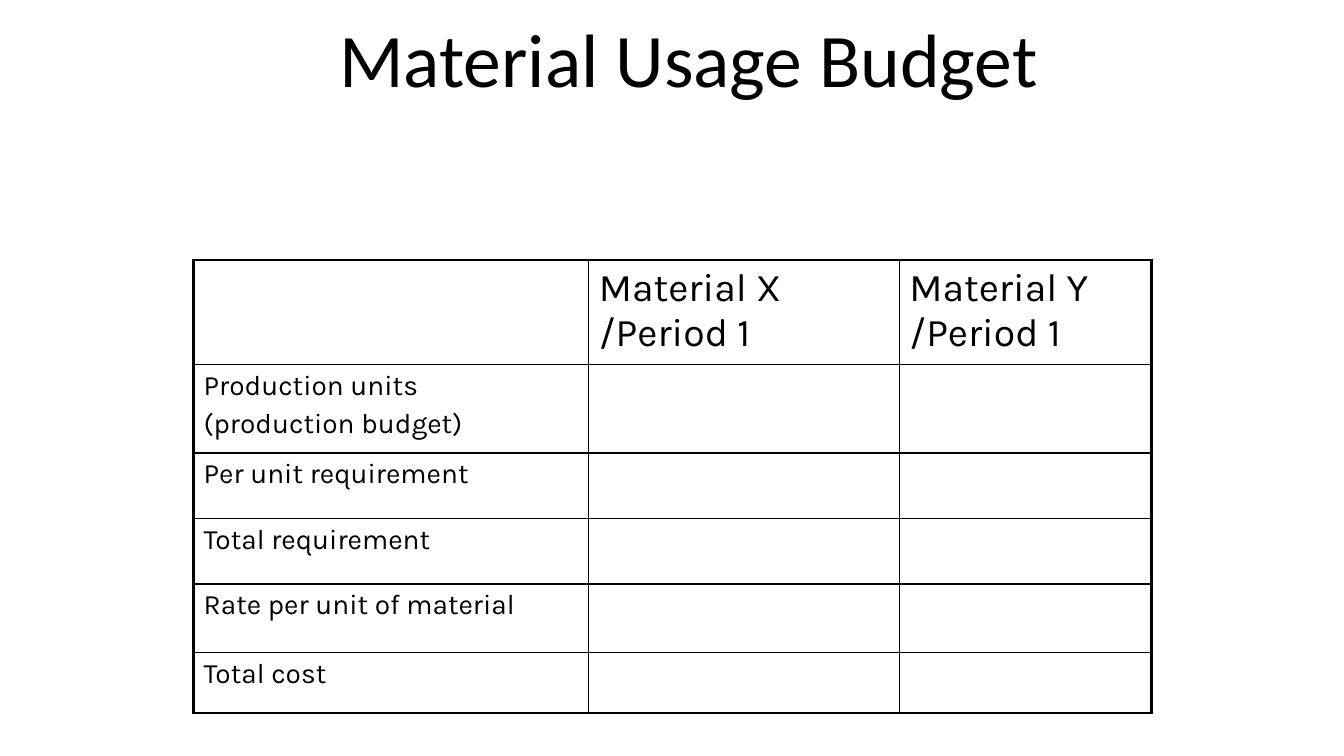
import dataclasses

import pptx
import pptx.dml.color
import pptx.enum.text
import pptx.oxml
import pptx.oxml.ns
import pptx.util

Inches = pptx.util.Inches
Pt = pptx.util.Pt
BLACK = "000000"
WIDTHS = [3.92, 3.08, 2.5]
THIN = 1
THICK = 2.25


@dataclasses.dataclass
class Row:
    height: float
    size: int
    texts: list[str]


ROWS = [
    Row(0.97, 28, ["", "Material X /Period 1", "Material Y /Period 1"]),
    Row(0.88, 20, ["Production units\n(production budget)", "", ""]),
    Row(0.65, 20, ["Per unit requirement", "", ""]),
    Row(0.65, 20, ["Total requirement", "", ""]),
    Row(0.68, 20, ["Rate per unit of material", "", ""]),
    Row(0.6, 20, ["Total cost", "", ""]),
]


def color(code: str) -> pptx.dml.color.RGBColor:
    return pptx.dml.color.RGBColor.from_string(code)


def style(line, name: str, size: int) -> None:
    line.font.name = name
    line.font.size = Pt(size)
    line.font.color.rgb = color(BLACK)


def border(cell, edges: dict[str, float]) -> None:
    props = cell._tc.get_or_add_tcPr()
    for index, (side, width) in enumerate(edges.items()):
        props.insert(index, pptx.oxml.parse_xml(
            f'<a:ln{side} {pptx.oxml.ns.nsdecls("a")} w="{Pt(width)}">'
            f'<a:solidFill><a:srgbClr val="{BLACK}"/></a:solidFill></a:ln{side}>'
        ))


def add_title(slide) -> None:
    box = slide.shapes.add_textbox(Inches(2.58), Inches(0.25), Inches(8.5), Inches(0.83))
    frame = box.text_frame
    frame.word_wrap = True
    frame.vertical_anchor = pptx.enum.text.MSO_ANCHOR.BOTTOM
    frame.text = "Material Usage Budget"
    line = frame.paragraphs[0]
    line.alignment = pptx.enum.text.PP_ALIGN.CENTER
    line.line_spacing = 0.9
    style(line, "Calibri", 54)


def fill_cell(cell, text: str, size: int) -> None:
    cell.fill.background()
    if text:
        cell.text = text
        for line in cell.text_frame.paragraphs:
            line.space_before = Pt(size * 0.2)
            style(line, "Karla", size)


def add_budget(slide) -> None:
    table = slide.shapes.add_table(
        len(ROWS), len(WIDTHS), Inches(1.92), Inches(2.58),
        Inches(sum(WIDTHS)), Inches(sum(row.height for row in ROWS)),
    ).table
    table.first_row = False
    table.horz_banding = False
    for column, width in zip(table.columns, WIDTHS):
        column.width = Inches(width)
    for y, row in enumerate(ROWS):
        table.rows[y].height = Inches(row.height)
        for x, text in enumerate(row.texts):
            cell = table.cell(y, x)
            fill_cell(cell, text, row.size)
            border(cell, {
                "L": THICK if x == 0 else THIN,
                "R": THICK if x == len(WIDTHS) - 1 else THIN,
                "T": THICK if y == 0 else THIN,
                "B": THICK if y == len(ROWS) - 1 else THIN,
            })


def main() -> None:
    deck = pptx.Presentation()
    deck.slide_width = Inches(13.33)
    deck.slide_height = Inches(7.5)
    slide = deck.slides.add_slide(deck.slide_layouts[6])
    add_title(slide)
    add_budget(slide)
    deck.save("out.pptx")


if __name__ == "__main__":
    main()
